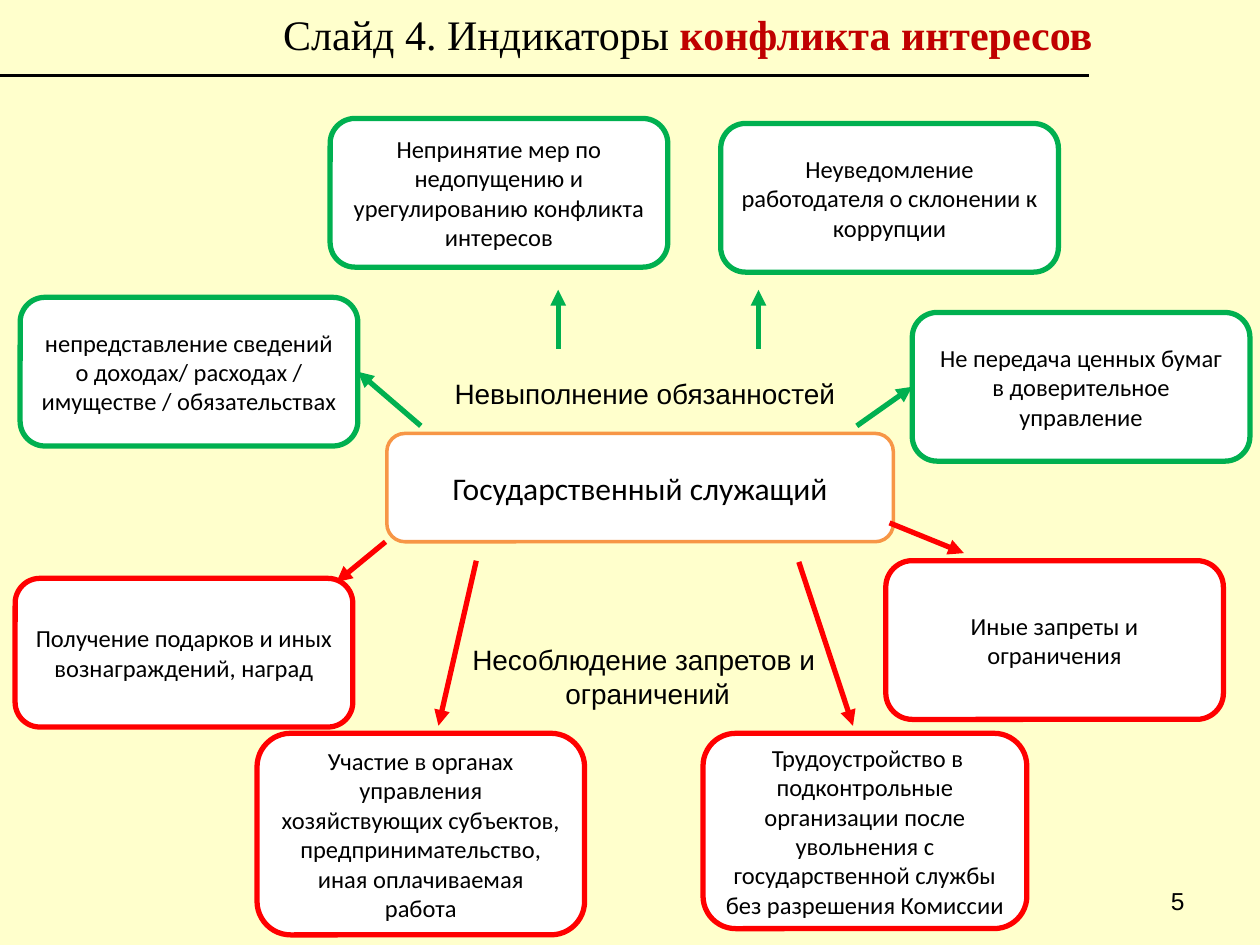
from lxml import etree
from pptx import Presentation
from pptx.dml.color import RGBColor
from pptx.enum.shapes import MSO_CONNECTOR, MSO_SHAPE
from pptx.enum.text import MSO_ANCHOR, PP_ALIGN
from pptx.oxml.ns import qn
from pptx.util import Inches, Pt

STRAIGHT = MSO_CONNECTOR.STRAIGHT
ROUNDED = MSO_SHAPE.ROUNDED_RECTANGLE
TOP, MIDDLE = MSO_ANCHOR.TOP, MSO_ANCHOR.MIDDLE
LEFT, CENTER, RIGHT = PP_ALIGN.LEFT, PP_ALIGN.CENTER, PP_ALIGN.RIGHT

CREAM = RGBColor(0xFF, 0xFF, 0xCC)
WHITE = RGBColor(0xFF, 0xFF, 0xFF)
BLACK = RGBColor(0, 0, 0)
GREEN = RGBColor(0x00, 0xB0, 0x50)
RED = RGBColor(0xFF, 0x00, 0x00)
ORANGE = RGBColor(0xF7, 0x96, 0x46)
DARK_RED = RGBColor(0xC0, 0x00, 0x00)

CARD_W, CARD_H = 2.68, 1.18

# Name: (left, top, width, height, colour, text)
CARDS = {
    "income": (0.16, 2.36, CARD_W, CARD_H, GREEN,
               "непредставление сведений о доходах/ расходах / имуществе / обязательствах"),
    "measures": (2.62, 0.94, CARD_W, CARD_H, GREEN,
                 "Непринятие мер по недопущению и урегулированию конфликта интересов"),
    "securities": (7.24, 2.48, CARD_W, CARD_H, GREEN,
                   "Не передача ценных бумаг в доверительное управление"),
    "gifts": (0.12, 4.59, CARD_W, CARD_H, RED,
              "Получение подарков и иных вознаграждений, наград"),
    "business": (2.04, 5.82, 2.6, 1.6, RED,
                 "Участие в органах управления хозяйствующих субъектов, "
                 "предпринимательство, иная оплачиваемая работа"),
    "employment": (5.58, 5.82, 2.57, 1.55, RED,
                   " Трудоустройство в подконтрольные организации после увольнения "
                   "с государственной службы без разрешения Комиссии"),
    "other": (7.03, 4.45, CARD_W, 1.26, RED, "Иные запреты и ограничения"),
    "notice": (5.72, 0.98, CARD_W, CARD_H, GREEN,
               "Неуведомление работодателя о склонении к коррупции"),
}

# Start, end, colour, joined card and its connection site
ARROWS = [
    ((3.34, 3.38), (2.87, 2.94), GREEN, "income", 3),
    ((6.8, 3.38), (7.22, 3.02), GREEN, "securities", 1),
    ((4.43, 2.77), (4.43, 2.3), GREEN, None, None),
    ((6.02, 2.77), (6.02, 2.3), GREEN, None, None),
    ((3.06, 4.3), (2.67, 4.62), RED, None, None),
    ((6.34, 4.46), (6.77, 5.76), RED, None, None),
    ((3.78, 4.45), (3.48, 5.76), RED, None, None),
    ((7.06, 4.15), (7.65, 4.39), RED, None, None),
]


def write(tf, paragraphs, align, **font):
    """Each paragraph is a list of (text, font overrides)."""
    for i, runs in enumerate(paragraphs):
        p = tf.paragraphs[0] if i == 0 else tf.add_paragraph()
        p.alignment = align
        for text, changes in runs:
            r = p.add_run()
            r.text = text
            values = {"color": BLACK, **font, **changes}
            r.font.color.rgb = values.pop("color")
            for name, value in values.items():
                setattr(r.font, name, value)


def add_label(s, box, paragraphs, align, wrap=True, anchor=TOP, **font):
    tf = s.shapes.add_textbox(*map(Inches, box)).text_frame
    tf.word_wrap = wrap
    tf.vertical_anchor = anchor
    write(tf, paragraphs, align, **font)


def add_card(s, box, text, color, weight=3, size=14):
    sp = s.shapes.add_shape(ROUNDED, *map(Inches, box))
    sp.shadow.inherit = False
    sp.fill.solid()
    sp.fill.fore_color.rgb = WHITE
    sp.line.color.rgb = color
    sp.line.width = Pt(weight)
    tf = sp.text_frame
    tf.word_wrap = True
    tf.vertical_anchor = MIDDLE
    write(tf, [[(text, {})]], CENTER, size=Pt(size), name="Calibri")
    return sp


def add_line(s, start, end, color, weight):
    line = s.shapes.add_connector(STRAIGHT, *map(Inches, start + end))
    line.line.color.rgb = color
    line.line.width = Pt(weight)
    etree.SubElement(line._element.spPr, qn("a:effectLst"))
    return line


def add_arrow(s, start, end, color, target=None, site=None):
    arrow = add_line(s, start, end, color, 3)
    etree.SubElement(arrow.line._get_or_add_ln(), qn("a:tailEnd"), type="triangle")
    if target is not None:
        arrow.end_connect(target, site)


def main():
    prs = Presentation()
    prs.slide_width, prs.slide_height = Inches(10), Inches(7.5)
    s = prs.slides.add_slide(prs.slide_layouts[6])
    s.background.fill.solid()
    s.background.fill.fore_color.rgb = CREAM

    # Title, rule and page number
    title = [("Слайд 4. Индикаторы ", {}),
             ("конфликта интересов", {"color": DARK_RED, "bold": True})]
    add_label(s, (1.98, 0.02, 6.96, 0.5), [title], CENTER,
              size=Pt(24), name="Times New Roman")
    add_line(s, (0, 0.6), (8.64, 0.6), BLACK, 1.5)
    add_label(s, (7.17, 6.95, 2.33, 0.4), [[("5", {})]], RIGHT, anchor=MIDDLE,
              size=Pt(14), name="Arial")

    # Centre and the two group labels
    add_card(s, (3.07, 3.44, 4.02, 0.86), "Государственный служащий", ORANGE, 2, 18)
    label_font = {"size": Pt(16), "name": "Arial"}
    add_label(s, (3.51, 2.94, 3.26, 0.37), [[("Невыполнение обязанностей", {})]],
              LEFT, wrap=False, **label_font)
    add_label(s, (3.63, 5.05, 3.02, 0.64),
              [[("Несоблюдение запретов и ", {})], [("ограничений", {})]],
              CENTER, wrap=False, **label_font)

    # Indicators around the centre
    cards = {name: add_card(s, box, text, color)
             for name, (*box, color, text) in CARDS.items()}
    for start, end, color, target, site in ARROWS:
        add_arrow(s, start, end, color, cards.get(target), site)

    prs.save("out.pptx")


if __name__ == "__main__":
    main()
